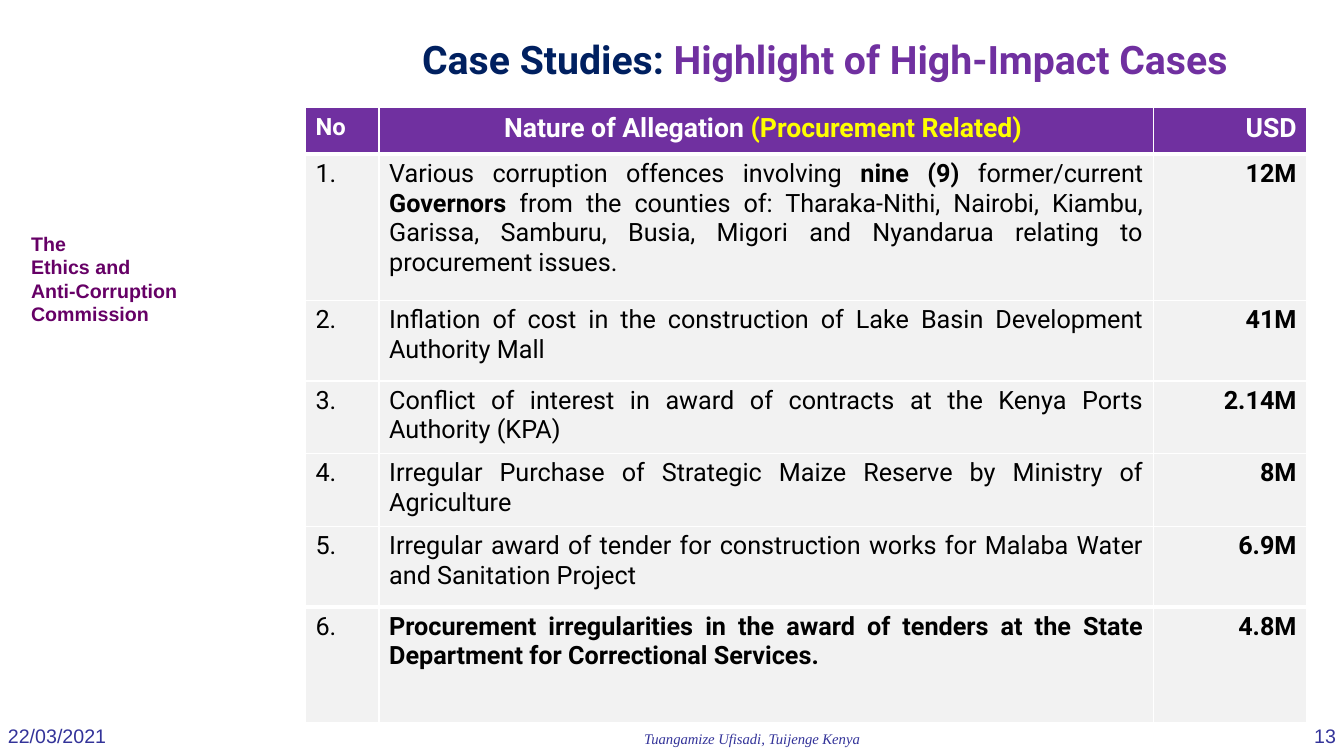
from lxml import etree
from pptx import Presentation
from pptx.dml.color import RGBColor
from pptx.enum import text as t
from pptx.oxml import ns
from pptx.util import Inches, Pt

WHITE = RGBColor(0xFF, 0xFF, 0xFF)
BLACK = RGBColor(0, 0, 0)
PURPLE = RGBColor(0x70, 0x30, 0xA0)
PLUM = RGBColor(0x66, 0x00, 0x66)
NAVY = RGBColor(0x00, 0x20, 0x60)
BLUE = RGBColor(0x33, 0x33, 0x99)
YELLOW = RGBColor(0xFF, 0xFF, 0x00)
GREY = RGBColor(0xF2, 0xF2, 0xF2)

LEFT, MID, RIGHT, FULL = (
    t.PP_ALIGN.LEFT, t.PP_ALIGN.CENTER, t.PP_ALIGN.RIGHT, t.PP_ALIGN.JUSTIFY)

TITLE = [("Case Studies: ", NAVY), ("Highlight of High-Impact Cases", PURPLE)]
AGENCY = ["The", "Ethics and", "Anti-Corruption", "Commission"]
HEADS = [
    ([("No", WHITE)], 17, FULL),
    ([("Nature of Allegation ", WHITE), ("(Procurement Related) ", YELLOW)], 19, MID),
    ([("USD", WHITE)], 19, RIGHT),
]
CASES = [
    ([("Various corruption offences involving ", False), ("nine (9)", True),
      (" former/current ", False), ("Governors ", True),
      ("from the counties of: Tharaka-Nithi, Nairobi, Kiambu, Garissa, Samburu, "
       "Busia, Migori and Nyandarua relating to procurement issues.", False)], "12M"),
    ([("Inflation of cost in the construction of Lake Basin Development "
       "Authority Mall", False)], "41M"),
    ([("Conflict of interest in award of contracts at the Kenya Ports "
       "Authority (KPA) ", False)], "2.14M"),
    ([("Irregular Purchase of Strategic Maize Reserve by Ministry of "
       "Agriculture", False)], "8M"),
    ([("Irregular award of tender for construction works for Malaba Water "
       "and Sanitation Project", False)], "6.9M"),
    ([("Procurement irregularities in the award of tenders at the State "
       "Department for Correctional Services.", True)], "4.8M"),
]
COLS = [0.73, 7.68, 1.52]
ROWS = [0.46, 1.45, 0.8, 0.72, 0.72, 0.8, 1.15]
THICK = {1, len(CASES)}
FOOTER = [
    ("22/03/2021", (-0.02, 7.13, 3.78, 0.37), LEFT, "Arial", 14, False),
    ("13", (12.32, 7.13, 1.03, 0.37), RIGHT, "Arial", 14, False),
    ("Tuangamize Ufisadi, Tuijenge Kenya", (4.86, 7.19, 5.2, 0.31), MID,
     "Times New Roman", 10.5, True),
]


def write(para, words, face, size, color, bold=False, slant=False):
    run = para.add_run()
    run.text = words
    font = run.font
    font.name, font.size, font.bold, font.italic = face, Pt(size), bold, slant
    font.color.rgb = color


def box(slide, place):
    frame = slide.shapes.add_textbox(*map(Inches, place)).text_frame
    frame.word_wrap = True
    return frame


def edge(cell, row):
    props = cell._tc.get_or_add_tcPr()
    wide = {"lnL": 1, "lnR": 1, "lnT": 3 if row in THICK else 1,
            "lnB": 3 if row + 1 in THICK else 1}
    for spot, side in enumerate(("lnL", "lnR", "lnT", "lnB")):
        line = etree.Element(ns.qn("a:" + side), w=str(Pt(wide[side])))
        fill = etree.SubElement(line, ns.qn("a:solidFill"))
        etree.SubElement(fill, ns.qn("a:srgbClr"), val=str(WHITE))
        props.insert(spot, line)


def fill_cell(cell, row, runs, size, align):
    cell.fill.solid()
    cell.fill.fore_color.rgb = GREY if row else PURPLE
    edge(cell, row)
    para = cell.text_frame.paragraphs[0]
    para.alignment = align
    para.space_after = Pt(4)
    for words, color, bold in runs:
        write(para, words, "Roboto", size, color, bold)


def add_cases(slide):
    table = slide.shapes.add_table(
        len(ROWS), len(COLS), Inches(3.03), Inches(1.07),
        Inches(sum(COLS)), Inches(sum(ROWS))).table
    table.horz_banding = False
    for col, width in zip(table.columns, COLS):
        col.width = Inches(width)
    for row, height in zip(table.rows, ROWS):
        row.height = Inches(height)
    for col, (runs, size, align) in enumerate(HEADS):
        fill_cell(table.cell(0, col), 0, [(w, c, True) for w, c in runs], size, align)
    for row, (claim, cost) in enumerate(CASES, 1):
        parts = [([(f"{row}.", False)], FULL), (claim, FULL), ([(cost, True)], RIGHT)]
        for col, (runs, align) in enumerate(parts):
            fill_cell(table.cell(row, col), row,
                      [(w, BLACK, b) for w, b in runs], 18, align)


def main():
    deck = Presentation()
    deck.slide_width, deck.slide_height = Inches(13.33), Inches(7.5)
    slide = deck.slides.add_slide(deck.slide_layouts[5])

    title = slide.shapes.title
    title.left, title.top, title.width, title.height = map(
        Inches, (3.03, 0.25, 10.3, 0.67))
    frame = title.text_frame
    frame.auto_size = t.MSO_AUTO_SIZE.NONE
    frame.vertical_anchor = t.MSO_ANCHOR.MIDDLE
    frame.paragraphs[0].alignment = MID
    for words, color in TITLE:
        write(frame.paragraphs[0], words, "Roboto", 28, color, True)

    frame = box(slide, (0.21, 2.25, 2.4, 1.04))
    for spot, words in enumerate(AGENCY):
        para = frame.add_paragraph() if spot else frame.paragraphs[0]
        write(para, words, "Arial", 14, PLUM, True)

    add_cases(slide)

    for words, place, align, face, size, slant in FOOTER:
        para = box(slide, place).paragraphs[0]
        para.alignment = align
        write(para, words, face, size, BLUE, slant=slant)

    deck.save("out.pptx")


if __name__ == "__main__":
    main()
